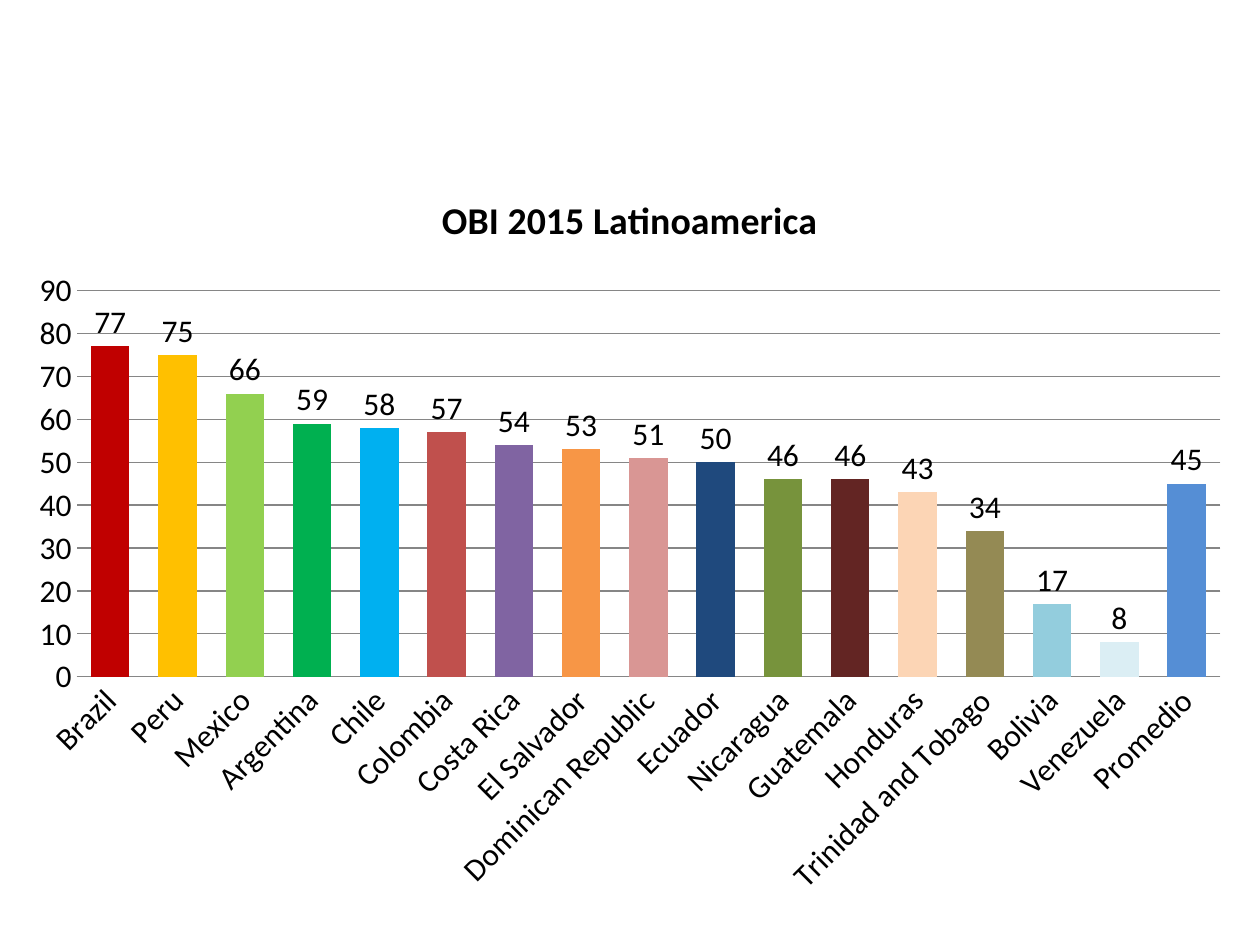
from pptx import Presentation
from pptx.chart.data import CategoryChartData
from pptx.dml.color import RGBColor
from pptx.enum.chart import XL_CHART_TYPE as ChartType
from pptx.enum.chart import XL_LABEL_POSITION as LabelPos
from pptx.enum.chart import XL_TICK_MARK as Tick
from pptx.util import Inches, Pt

FONT = "Calibri"
BLACK = "000000"
GRID = "868686"
SCORES = [
    ("Brazil", 77, "C00000"),
    ("Peru", 75, "FFC000"),
    ("Mexico", 66, "92D050"),
    ("Argentina", 59, "00B050"),
    ("Chile", 58, "00B0F0"),
    ("Colombia", 57, "C0504D"),
    ("Costa Rica", 54, "8064A2"),
    ("El Salvador", 53, "F79646"),
    ("Dominican Republic", 51, "D99694"),
    ("Ecuador", 50, "1F497D"),
    ("Nicaragua", 46, "77933C"),
    ("Guatemala", 46, "632523"),
    ("Honduras", 43, "FCD5B5"),
    ("Trinidad and Tobago", 34, "948A54"),
    ("Bolivia", 17, "93CDDD"),
    ("Venezuela", 8, "DBEEF4"),
    ("Promedio", 45, "558ED5"),
]


def rgb(value):
    """Turn a hex string into a colour."""
    return RGBColor.from_string(value)


def style_font(font, size, bold=False):
    """Set the chart's typeface, size and weight on a font."""
    font.name = FONT
    font.size = Pt(size)
    font.bold = bold
    font.color.rgb = rgb(BLACK)


def style_line(line, color):
    """Give a line its colour and a thin width."""
    line.color.rgb = rgb(color)
    line.width = Pt(0.75)


def set_title(chart, text):
    """Write the chart title above the plot."""
    chart.has_title = True
    title = chart.chart_title
    title.include_in_layout = False
    r = title.text_frame.paragraphs[0].add_run()
    r.text = text
    style_font(r.font, 21.6, bold=True)


def style_axes(chart):
    """Format the slanted country axis and the gridded score axis."""
    countries, scores = chart.category_axis, chart.value_axis
    for axis in (countries, scores):
        axis.major_tick_mark = axis.minor_tick_mark = Tick.NONE
        style_font(axis.tick_labels.font, 18)
    countries.has_major_gridlines = False
    style_line(countries.format.line, GRID)
    body = countries._element.txPr.bodyPr
    body.set("rot", "-2700000")
    body.set("vert", "horz")

    scores.minimum_scale, scores.maximum_scale = 0, 90
    scores.major_unit = 10
    scores.has_major_gridlines = True
    style_line(scores.major_gridlines.format.line, GRID)
    scores.format.line.fill.background()
    scores.tick_labels.number_format = "0"
    scores.tick_labels.number_format_is_linked = False


def style_columns(plot):
    """Colour each country's column and label it with its score."""
    plot.gap_width, plot.overlap = 75, -25
    plot.vary_by_categories = False
    series = plot.series[0]
    series.invert_if_negative = False
    base = SCORES[-1][2]
    series.format.fill.solid()
    series.format.fill.fore_color.rgb = rgb(base)
    for i, (_, _, color) in enumerate(SCORES[:-1]):
        fill = series.points[i].format.fill
        fill.solid()
        fill.fore_color.rgb = rgb(color)
    labels = series.data_labels
    labels.show_value = True
    labels.position = LabelPos.OUTSIDE_END
    labels.number_format = "0"
    labels.number_format_is_linked = False
    style_font(labels.font, 18)


def add_score_chart(slide, left, top, width, height):
    """Place the column chart of scores by country in the given box."""
    data = CategoryChartData(number_format="0")
    data.categories = [country for country, _, _ in SCORES]
    data.add_series("Series 1", [score for _, score, _ in SCORES])
    chart = slide.shapes.add_chart(
        ChartType.COLUMN_CLUSTERED, left, top, width, height, data
    ).chart
    style_font(chart.font, 18)
    chart.has_legend = False
    set_title(chart, "OBI 2015 Latinoamerica")
    style_axes(chart)
    style_columns(chart.plots[0])


def main():
    """Build the slide and save it."""
    prs = Presentation()
    prs.slide_width, prs.slide_height = Inches(10), Inches(7.5)
    s = prs.slides.add_slide(prs.slide_layouts[6])
    add_score_chart(s, Inches(0.12), Inches(1.31), Inches(9.76), Inches(5.91))
    prs.save("out.pptx")


if __name__ == "__main__":
    main()
